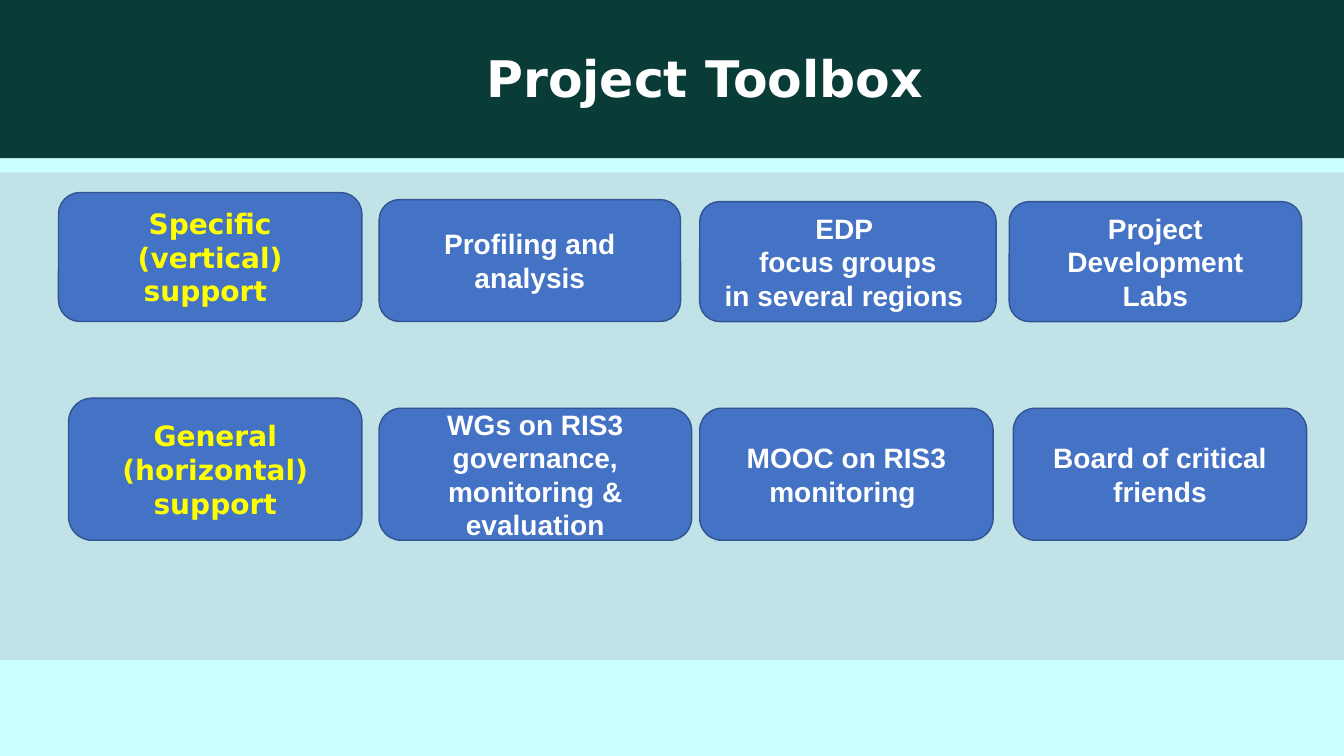
"""Build the Project Toolbox slide: a header band and two rows of support cards."""
from pptx import Presentation, util as u
from pptx.dml.color import RGBColor
from pptx.enum import shapes, text

THEME = {
    "background": "CCFFFF", "panel": "C1E3E8", "header": "093B37",
    "card": "4472C4", "outline": "325491", "light": "FFFFFF", "accent": "FFFF00",
    "title_size": 36, "card_size": 20, "title_font": "DejaVu Sans", "card_font": "Arial",
}
WIDTH, HEIGHT = 13.33, 7.5
COLUMNS = (0.58, 3.76, 6.94, 10.01)
ROW_BOTTOMS = (3.19, 5.36)


def add_block(slide, kind, box, fill, outline=None):
    shape = slide.shapes.add_shape(kind, *[u.Inches(length) for length in box])
    shape.shadow.inherit = False
    shape.fill.solid()
    shape.fill.fore_color.rgb = RGBColor.from_string(THEME[fill])
    if outline:
        shape.line.color.rgb = RGBColor.from_string(THEME[outline])
        shape.line.width = u.Pt(1)
    else:
        shape.line.fill.background()
    return shape


def write_text(shape, lines, anchor, font, size, color):
    frame = shape.text_frame
    frame.word_wrap = True
    frame.vertical_anchor = anchor
    frame.text = "\n".join(lines)
    for paragraph in frame.paragraphs:
        paragraph.alignment = text.PP_ALIGN.CENTER
        values = {"name": THEME[font], "size": u.Pt(THEME[size]), "bold": True}
        for run in paragraph.runs:
            for name, value in values.items():
                setattr(run.font, name, value)
            run.font.color.rgb = RGBColor.from_string(THEME[color])


presentation = Presentation()
presentation.slide_width = u.Inches(WIDTH)
presentation.slide_height = u.Inches(HEIGHT)
slide = presentation.slides.add_slide(presentation.slide_layouts[6])
slide.background.fill.solid()
slide.background.fill.fore_color.rgb = RGBColor.from_string(THEME["background"])

for top, height, fill in ((1.71, 4.84, "panel"), (0, 1.57, "header")):
    add_block(slide, shapes.MSO_SHAPE.RECTANGLE, (0, top, WIDTH, height), fill)

title = slide.shapes.add_textbox(*[u.Inches(length) for length in (1.03, 0.49, 11.92, 1.09)])
write_text(title, ["Project Toolbox"], text.MSO_ANCHOR.TOP, "title_font", "title_size", "light")
title.text_frame.paragraphs[0].line_spacing = 0.9

card_rows = (
    (
        (0, 3.01, 1.28, ["Specific (vertical) support "]),
        (0, 2.99, 1.21, ["Profiling and analysis"]),
        (0, 2.94, 1.19, ["EDP ", "focus groups", "in several regions "]),
        (0, 2.9, 1.19, ["Project", "Development", "Labs"]),
    ),
    (
        (0.1, 2.91, 1.41, ["General (horizontal) support"]),
        (0, 3.1, 1.31, ["WGs on RIS3 governance, monitoring & evaluation"]),
        (0, 2.91, 1.31, ["MOOC on RIS3 monitoring "]),
        (0.04, 2.91, 1.31, ["Board of critical friends"]),
    ),
)
for bottom, cards in zip(ROW_BOTTOMS, card_rows):
    for column, (left, (indent, width, height, lines)) in enumerate(zip(COLUMNS, cards)):
        box = (left + indent, bottom - height, width, height)
        card = add_block(slide, shapes.MSO_SHAPE.ROUNDED_RECTANGLE, box, "card", "outline")
        font, color = ("card_font", "light") if column else ("title_font", "accent")
        write_text(card, lines, text.MSO_ANCHOR.MIDDLE, font, "card_size", color)

presentation.save("out.pptx")
